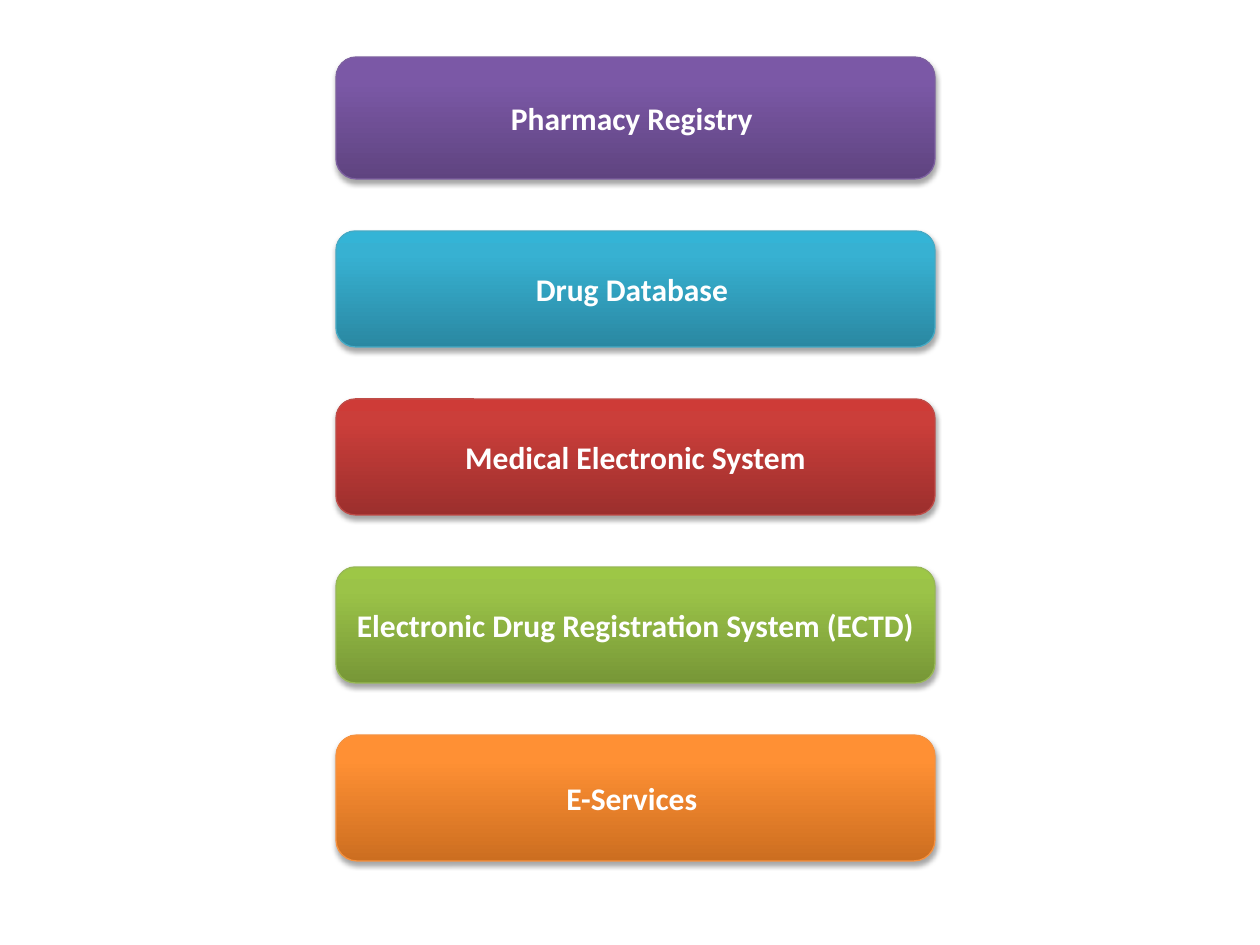
from copy import deepcopy

from lxml.etree import SubElement
from pptx import Presentation
from pptx.dml.color import RGBColor
from pptx.enum.shapes import MSO_SHAPE
from pptx.enum.text import MSO_ANCHOR, PP_ALIGN
from pptx.oxml.ns import qn
from pptx.util import Pt

PX = 914400 / 126  # EMU per px


def px(n):
    return round(n * PX)


def rgb(value):
    return RGBColor.from_string(value)


prs = Presentation()
prs.slide_width, prs.slide_height = px(1260), px(945)
s = prs.slides.add_slide(prs.slide_layouts[6])

# Text, height, gradient from bottom to top, outline
boxes = [
    ("Pharmacy Registry ", 122, ("5F4480", "7B58A6", "7C57A8"), "7D60A0"),
    ("Drug Database ", 116, ("2A88A2", "37B1D2", "34B4D6"), "46AAC5"),
    ("Medical Electronic System", 116, ("9C2F2D", "CB3E3A", "CE3B37"), "BF4C48"),
    ("Electronic Drug Registration System (ECTD)", 116,
     ("779737", "9BC348", "9DC746"), "98B955"),
    ("E-Services ", 126, ("CC6E20", "FF9034", "FF9136"), "F69240"),
]
left, top, width, gap = 336, 57, 599, 52

for text, height, colors, outline in boxes:
    sp = s.shapes.add_shape(MSO_SHAPE.ROUNDED_RECTANGLE,
                            px(left), px(top), px(width), px(height))
    top += height + gap

    # Three-stop gradient
    sp.fill.gradient()
    sp.fill.gradient_angle = 90
    stops = sp._element.spPr.find(qn("a:gradFill")).find(qn("a:gsLst"))
    stops.insert(1, deepcopy(stops[0]))
    for stop, position, color in zip(sp.fill.gradient_stops, (0, 0.8, 1), colors):
        stop.position = position
        stop.color.rgb = rgb(color)
    sp.line.color.rgb = rgb(outline)
    sp.line.width = Pt(0.75)

    # Soft shadow below
    sp.shadow.inherit = False
    effects = sp._element.spPr.find(qn("a:effectLst"))
    shadow = SubElement(effects, qn("a:outerShdw"), blurRad=str(Pt(3.1)),
                        dist=str(Pt(1.8)), dir="5400000", rotWithShape="0")
    black = SubElement(shadow, qn("a:srgbClr"), val="000000")
    SubElement(black, qn("a:alpha"), val="35000")

    # Label
    tf = sp.text_frame
    tf.word_wrap = True
    tf.vertical_anchor = MSO_ANCHOR.MIDDLE
    p = tf.paragraphs[0]
    p.alignment = PP_ALIGN.CENTER
    r = p.add_run()
    r.text = text
    r.font.name = "Calibri"
    r.font.size = Pt(18)
    r.font.bold = True
    r.font.color.rgb = rgb("FFFFFF")

prs.save("out.pptx")
